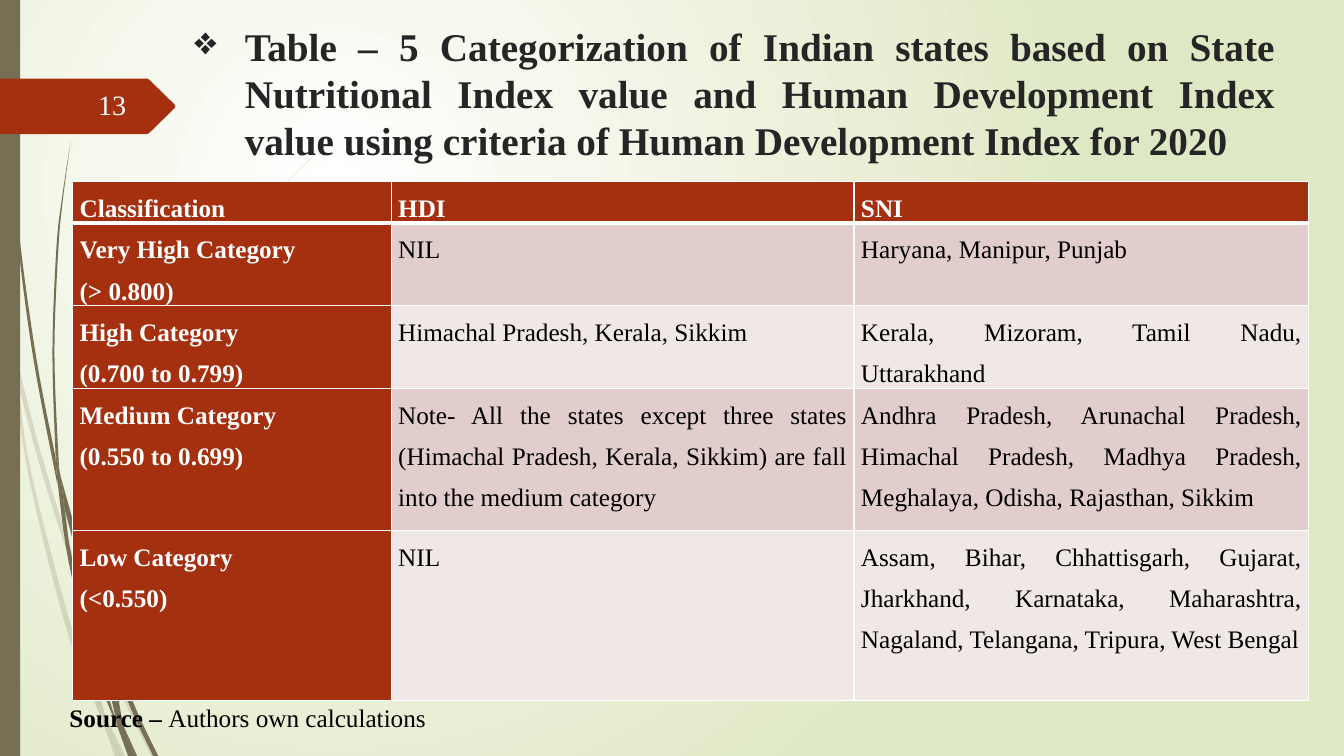
from pptx import Presentation
from pptx.dml.color import RGBColor
from pptx.enum.shapes import MSO_SHAPE as Shape
from pptx.enum.text import MSO_ANCHOR as Anchor, PP_ALIGN as Align
from pptx.oxml import parse_xml
from pptx.oxml.ns import nsdecls, qn
from pptx.util import Inches, Pt

WIDTH, HEIGHT = 13.33, 7.5
FONT = "Times New Roman"
OLIVE, RUST, WHITE, BLACK = "766F54", "A53010", "FFFFFF", "000000"
BANDS = ("E1CDCC", "F0E8E7")

# Grass blades: each piece is a pair of edges, one down and one back
FAINT_BLADES = [
    ([(0, 2.82), (0.09, 3.22), (0.11, 3.5)], [(0.1, 3.44), (0, 2.99)]),
    ([(0.17, 3.76), (0.36, 4.5), (0.58, 5.22), (0.84, 5.99)],
     [(0.85, 5.86), (0.62, 5.2), (0.36, 4.33), (0.14, 3.45)]),
    ([(0.88, 5.96), (0.92, 6.07), (1.27, 6.92), (1.55, 7.5)],
     [(1.5, 7.5), (1.23, 6.94), (0.88, 6.1)]),
    ([(1.05, 7.11), (1.24, 7.5)], [(1.19, 7.5)]),
    ([(0.11, 3.5), (0.17, 3.76), (0.31, 4.69), (0.7, 6.19), (0.93, 6.83), (1.01, 7.14)],
     [(0.92, 6.93), (0.65, 6.21), (0.28, 4.7), (0.11, 3.5)]),
    ([(0.84, 5.99), (0.87, 6.46), (0.93, 6.83), (1.05, 7.11)],
     [(1.03, 7.06), (0.91, 6.46), (0.88, 6.08)]),
    ([(0.88, 5.96), (0.88, 5.84), (1.1, 4.62), (1.6, 3.49), (2.29, 2.45), (2.68, 1.98), (3.12, 1.54)],
     [(3.12, 1.53), (2.68, 1.97), (2.28, 2.44), (1.58, 3.48), (1.07, 4.61), (0.85, 5.84)]),
    ([(1.01, 7.14), (1.14, 7.5)], [(1.19, 7.5)]),
    ([(0.85, 5.86), (0.84, 5.99), (0.88, 6.1)], [(0.88, 5.96)]),
    ([(0.93, 6.83), (1.05, 7.11), (1.19, 7.5)], [(1.01, 7.14), (0.99, 7.07)]),
]
SOLID_BLADES = [
    ([(0.03, 0), (0.07, 1.1), (0.17, 2.33), (0.33, 3.55), (0.57, 4.81)],
     [(0.55, 4.53), (0.36, 3.55), (0.19, 2.32), (0.08, 1.09), (0.04, 0)]),
    ([(0.64, 5.05), (0.88, 5.92), (1.06, 6.45)], [(1.06, 6.31), (0.93, 5.9), (0.6, 4.72)]),
    ([(1.1, 6.41), (1.13, 6.49), (1.36, 7.06), (1.57, 7.5)],
     [(1.52, 7.5), (1.32, 7.08), (1.11, 6.56)]),
    ([(0.57, 4.77), (0.64, 5.05), (0.72, 5.56), (0.98, 6.57), (1.17, 7.22)],
     [(1.11, 7.08), (0.93, 6.59), (0.68, 5.57), (0.57, 4.77)]),
    ([(0.7, 1.41), (0.63, 1.93), (0.58, 2.45), (0.54, 3.49), (0.58, 4.53), (0.6, 4.72)],
     [(0.55, 4.49), (0.52, 3.49), (0.56, 2.45), (0.62, 1.93), (0.7, 1.41)]),
    ([(1.22, 7.19), (1.36, 7.5)], [(1.33, 7.5)]),
    ([(0.55, 4.49), (0.57, 4.77), (0.64, 5.05)], [(0.6, 4.72)]),
    ([(1.1, 6.41), (1.11, 6.33), (1.25, 5.52), (1.58, 4.76), (2.05, 4.06), (2.61, 3.44)],
     [(2.6, 3.44), (2.04, 4.05), (1.56, 4.74), (1.22, 5.51), (1.06, 6.31)]),
    ([(1.17, 7.22), (1.27, 7.5)], [(1.31, 7.5)]),
    ([(1.06, 6.45), (1.1, 6.91), (1.22, 7.19)], [(1.11, 6.56)]),
    ([(1.06, 6.31), (1.06, 6.45), (1.11, 6.56)], [(1.1, 6.41)]),
    ([(1.1, 6.91), (1.22, 7.19), (1.33, 7.5)], [(1.3, 7.5), (1.17, 7.22)]),
]

HEADINGS = ["Classification", "HDI", "SNI"]
CATEGORIES = [
    ["Very High Category\n(> 0.800)", "NIL", "Haryana, Manipur, Punjab"],
    ["High Category\n(0.700 to 0.799)", "Himachal Pradesh, Kerala, Sikkim",
     "Kerala, Mizoram, Tamil Nadu, Uttarakhand"],
    ["Medium Category\n(0.550 to 0.699)",
     "Note- All the states except three states (Himachal Pradesh, Kerala, Sikkim) "
     "are fall into the medium category",
     "Andhra Pradesh, Arunachal Pradesh, Himachal Pradesh, Madhya Pradesh, "
     "Meghalaya, Odisha, Rajasthan, Sikkim"],
    ["Low Category\n(<0.550)", "NIL",
     "Assam, Bihar, Chhattisgarh, Gujarat, Jharkhand, Karnataka, Maharashtra, "
     "Nagaland, Telangana, Tripura, West Bengal"],
]
COLUMN_WIDTHS = [3.16, 4.59, 4.51]
ROW_HEIGHTS = [0.41, 0.82, 0.82, 1.41, 1.69]
LINE_PITCH = Pt(29.5)  # two lines fill a 0.82 inch row


def rgb(code):
    return RGBColor.from_string(code)


def apply(target, values):
    for key, value in values.items():
        setattr(target, key, value)


def paint(shape, color, alpha=100):
    shape.shadow.inherit = False
    shape.fill.solid()
    shape.fill.fore_color.rgb = rgb(color)
    shape.line.fill.background()
    if alpha < 100:
        tint = shape.fill._xPr.find(".//" + qn("a:srgbClr"))
        tint.append(parse_xml(f'<a:alpha {nsdecls("a")} val="{alpha * 1000}"/>'))


def write(paragraph, text, size, color, bold=False):
    run = paragraph.add_run()
    run.text = text
    apply(run.font, {"name": FONT, "size": Pt(size), "bold": bold})
    run.font.color.rgb = rgb(color)


def add_text(slide, box, align=Align.LEFT, anchor=Anchor.TOP):
    frame = slide.shapes.add_textbox(*map(Inches, box)).text_frame
    apply(frame, {"word_wrap": True, "vertical_anchor": anchor})
    frame.paragraphs[0].alignment = align
    return frame.paragraphs[0]


def smooth(edge, steps=6):
    """Points of a Catmull-Rom curve through an edge."""
    padded = [edge[0], *edge, edge[-1]]
    curve = [edge[0]]
    for a, b, c, d in zip(padded, padded[1:], padded[2:], padded[3:]):
        for t in (step / steps for step in range(1, steps + 1)):
            curve.append(tuple(
                q + ((r - p) * t + (2 * p - 5 * q + 4 * r - s) * t ** 2
                     + (3 * q - p - 3 * r + s) * t ** 3) / 2
                for p, q, r, s in zip(a, b, c, d)))
    return curve


def add_outline(slide, origin, points, color, alpha=100):
    start, *rest = [(Inches(origin[0] + x), Inches(origin[1] + y)) for x, y in points]
    builder = slide.shapes.build_freeform(*start)
    builder.add_line_segments(rest, close=True)
    paint(builder.convert_to_shape(), color, alpha)


def add_background(slide):
    fill = slide.background.fill
    fill.gradient()
    for stop, color, position in zip(fill.gradient_stops, (WHITE, "DFE8C4"), (0, 1)):
        stop.color.rgb = rgb(color)
        stop.position = position
    gradient = slide.element.find(".//" + qn("a:gradFill"))
    gradient.remove(gradient.find(qn("a:lin")))
    gradient.append(parse_xml(
        f'<a:path {nsdecls("a")} path="circle"><a:fillToRect l="50000" t="50000" '
        'r="100000" b="100000"/></a:path>'))


def add_grass(slide, box):
    left, top, width, height = box
    for blades, alpha in ((FAINT_BLADES, 20), (SOLID_BLADES, 100)):
        for down, back in blades:
            add_outline(slide, (left, top), smooth(down) + smooth(back), OLIVE, alpha)
    stem = slide.shapes.add_shape(
        Shape.RECTANGLE, *map(Inches, (left, top, width * 0.015, height)))
    paint(stem, OLIVE)


def add_page_tag(slide, box, number):
    left, top, width, height = box
    tip = height / 2 - 0.02
    add_outline(slide, (left, top), [
        (0, 0), (width - 0.28, 0), (width - 0.26, 0.01), (width - 0.01, tip),
        (width, height / 2), (width - 0.01, height - tip),
        (width - 0.26, height - 0.01), (width - 0.28, height), (0, height)], RUST)
    label = add_text(slide, (left + 0.59, top + 0.05, 0.76, 0.4), Align.RIGHT, Anchor.MIDDLE)
    write(label, number, 20, "FEFFFF")


def add_title(slide, box, text):
    title = add_text(slide, box, Align.JUSTIFY)
    write(title, text, 28, "252525", True)
    props = title._p.get_or_add_pPr()
    props.set("marL", str(Inches(0.5)))
    props.set("indent", str(-Inches(0.5)))
    props.append(parse_xml(f'<a:buChar {nsdecls("a")} char="❖"/>'))


def add_borders(cell, widths):
    props = cell._tc.get_or_add_tcPr()
    for side, width in widths.items():
        props.append(parse_xml(
            f'<a:ln{side} {nsdecls("a")} w="{Pt(width)}"><a:solidFill>'
            f'<a:srgbClr val="{WHITE}"/></a:solidFill></a:ln{side}>'))


def add_category_table(slide, box):
    rows = [HEADINGS, *CATEGORIES]
    table = slide.shapes.add_table(len(rows), len(HEADINGS), *map(Inches, box)).table
    for column, width in zip(table.columns, COLUMN_WIDTHS):
        column.width = Inches(width)
    for r, (texts, height) in enumerate(zip(rows, ROW_HEIGHTS)):
        table.rows[r].height = Inches(height)
        for c, text in enumerate(texts):
            cell = table.cell(r, c)
            strong = r == 0 or c == 0
            apply(cell, {"margin_left": Inches(0.07), "margin_right": Inches(0.07),
                         "margin_top": 0, "margin_bottom": 0})
            add_borders(cell, {"L": 1, "R": 1, "T": 3 if r == 1 else 1, "B": 3 if r == 0 else 1})
            cell.fill.solid()
            cell.fill.fore_color.rgb = rgb(RUST if strong else BANDS[(r - 1) % 2])
            for i, line in enumerate(text.split("\n")):
                paragraph = cell.text_frame.add_paragraph() if i else cell.text_frame.paragraphs[0]
                apply(paragraph, {"alignment": Align.JUSTIFY, "line_spacing": LINE_PITCH})
                write(paragraph, line, 18, WHITE if strong else BLACK, strong)


def add_source(slide, box):
    source = add_text(slide, box)
    write(source, "Source – ", 18, BLACK, True)
    write(source, "Authors own calculations", 18, BLACK)


def main():
    deck = Presentation()
    apply(deck, {"slide_width": Inches(WIDTH), "slide_height": Inches(HEIGHT)})
    slide = deck.slides.add_slide(deck.slide_layouts[6])
    add_background(slide)
    add_grass(slide, (0, 0, WIDTH, HEIGHT))
    add_page_tag(slide, (0, 0.78, 1.74, 0.55), "13")
    add_title(slide, (1.83, 0.17, 10.91, 1.49),
              "Table – 5 Categorization of Indian states based on State Nutritional Index value and "
              "Human Development Index value using criteria of Human Development Index for 2020")
    add_category_table(slide, (0.72, 1.8, sum(COLUMN_WIDTHS), sum(ROW_HEIGHTS)))
    add_source(slide, (0.59, 6.92, 5.18, 0.4))
    deck.save("out.pptx")


if __name__ == "__main__":
    main()
